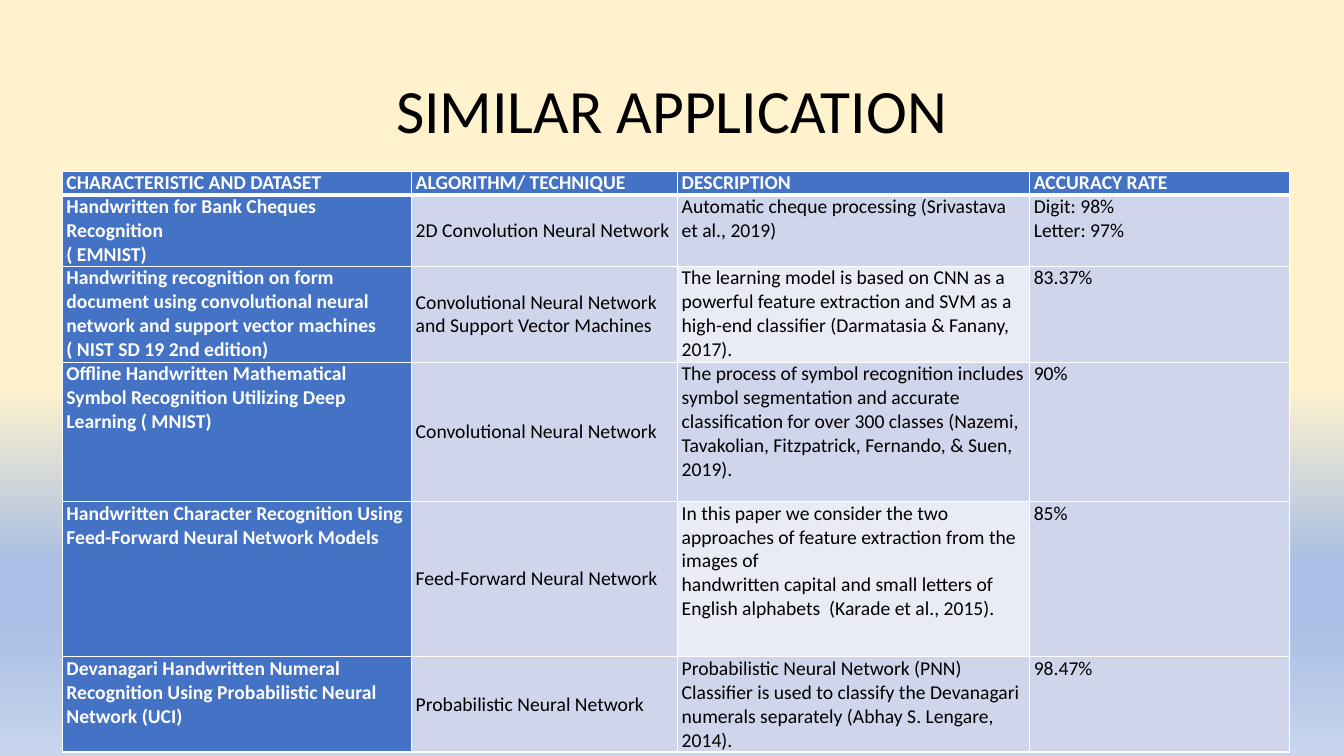
import pptx
import pptx.dml.color
import pptx.enum.text
import pptx.oxml
import pptx.oxml.ns
import pptx.util
from lxml import etree

Pt = pptx.util.Pt
RGBColor = pptx.dml.color.RGBColor
qn = pptx.oxml.ns.qn
ANCHOR = pptx.enum.text.MSO_ANCHOR
ALIGN = pptx.enum.text.PP_ALIGN

BLACK = RGBColor(0x00, 0x00, 0x00)
WHITE = RGBColor(0xFF, 0xFF, 0xFF)
BLUE = RGBColor(0x44, 0x72, 0xC4)
BAND = RGBColor(0xCF, 0xD5, 0xEA)
LIGHT = RGBColor(0xE9, 0xEB, 0xF5)
CREAM = RGBColor(0xFF, 0xF2, 0xCC)
SKY = RGBColor(0xAB, 0xC0, 0xE4)
PALE = RGBColor(0xC7, 0xD5, 0xED)

BACKGROUND = [(51, CREAM), (74, SKY), (83, SKY), (100, PALE)]
COLUMNS = [249.5, 190, 251.5, 185.5]
HEIGHTS = [17, 51, 68.5, 99.5, 111, 68]
ROWS = [
    ["CHARACTERISTIC AND DATASET", "ALGORITHM/ TECHNIQUE", "DESCRIPTION", "ACCURACY RATE"],
    ["Handwritten for Bank Cheques Recognition\n( EMNIST)",
     "2D Convolution Neural Network",
     "Automatic cheque processing (Srivastava et al., 2019)",
     "Digit: 98%\nLetter: 97%"],
    ["Handwriting recognition on form document using convolutional neural network "
     "and support vector machines ( NIST SD 19 2nd edition)",
     "Convolutional Neural Network and Support Vector Machines",
     "The learning model is based on CNN as a powerful feature extraction and SVM "
     "as a high-end classifier (Darmatasia & Fanany, 2017).",
     "83.37%"],
    ["Offline Handwritten Mathematical Symbol Recognition Utilizing Deep Learning ( MNIST)",
     "Convolutional Neural Network",
     "The process of symbol recognition includes symbol segmentation and accurate "
     "classification for over 300 classes (Nazemi, Tavakolian, Fitzpatrick, Fernando, "
     "& Suen, 2019).",
     "90%"],
    ["Handwritten Character Recognition Using Feed-Forward Neural Network Models",
     "Feed-Forward Neural Network",
     "In this paper we consider the two approaches of feature extraction from the images of\n"
     "handwritten capital and small letters of English alphabets  (Karade et al., 2015).",
     "85%"],
    ["Devanagari Handwritten Numeral Recognition Using Probabilistic Neural Network (UCI)",
     "Probabilistic Neural Network",
     "Probabilistic Neural Network (PNN) Classifier is used to classify the Devanagari "
     "numerals separately (Abhay S. Lengare, 2014).",
     "98.47%"],
]


class Deck:
    font = "Calibri"
    title_size = 44
    table_size = 14

    def __init__(self):
        self.prs = pptx.Presentation()
        self.prs.slide_width, self.prs.slide_height = Pt(960), Pt(540)
        self.s = self.prs.slides.add_slide(self.prs.slide_layouts[6])

    def background(self, stops):
        fill = self.s.background.fill
        fill.gradient()
        fill.gradient_angle = 270
        gs_list = next(self.s.element.iter(qn("a:gsLst")))
        for gs in list(gs_list):
            gs_list.remove(gs)
        for percent, color in stops:
            gs = etree.SubElement(gs_list, qn("a:gs"), pos=str(percent * 1000))
            etree.SubElement(gs, qn("a:srgbClr"), val=str(color))

    def style(self, tf, size, color, bold=False):
        for p in tf.paragraphs:
            p.font.name = self.font
            p.font.size = Pt(size)
            p.font.bold = bold
            p.font.color.rgb = color

    def title(self, text, x, y, w, h):
        tf = self.s.shapes.add_textbox(Pt(x), Pt(y), Pt(w), Pt(h)).text_frame
        tf.word_wrap = True
        tf.vertical_anchor = ANCHOR.MIDDLE
        tf.text = text
        self.style(tf, self.title_size, BLACK)
        tf.paragraphs[0].alignment = ALIGN.CENTER
        tf.paragraphs[0].line_spacing = 0.9

    def borders(self, cell, widths):
        tc_pr = cell._tc.get_or_add_tcPr()
        for side, width in zip("LRTB", widths):
            ln = etree.SubElement(tc_pr, qn("a:ln" + side), w=str(Pt(width)))
            fill = etree.SubElement(ln, qn("a:solidFill"))
            etree.SubElement(fill, qn("a:srgbClr"), val=str(WHITE))

    def cell(self, cell, text, i, j):
        header = i == 0 or j == 0
        self.borders(cell, (1, 1, 3 if i == 1 else 1, 3 if i == 0 else 1))
        cell.fill.solid()
        if header:
            cell.fill.fore_color.rgb = BLUE
        else:
            cell.fill.fore_color.rgb = LIGHT if j == 2 and i % 2 == 0 else BAND
        cell.margin_left = cell.margin_right = Pt(3)
        cell.margin_top = cell.margin_bottom = Pt(0)
        middle = j == 1 or (i, j) == (0, 0)
        cell.vertical_anchor = ANCHOR.MIDDLE if middle else ANCHOR.TOP
        cell.text_frame.text = text
        self.style(cell.text_frame, self.table_size, WHITE if header else BLACK, header)

    def table(self, rows, x, y, widths, heights):
        table = self.s.shapes.add_table(
            len(rows), len(widths), Pt(x), Pt(y), Pt(sum(widths)), Pt(sum(heights))).table
        for column, width in zip(table.columns, widths):
            column.width = Pt(width)
        for i, (row, height) in enumerate(zip(rows, heights)):
            table.rows[i].height = Pt(height)
            for j, text in enumerate(row):
                self.cell(table.cell(i, j), text, i, j)


def main():
    deck = Deck()
    deck.background(BACKGROUND)
    deck.title("SIMILAR APPLICATION", 66, 28.75, 828, 104.5)
    deck.table(ROWS, 44.5, 122.25, COLUMNS, HEIGHTS)
    deck.prs.save("out.pptx")


if __name__ == "__main__":
    main()
